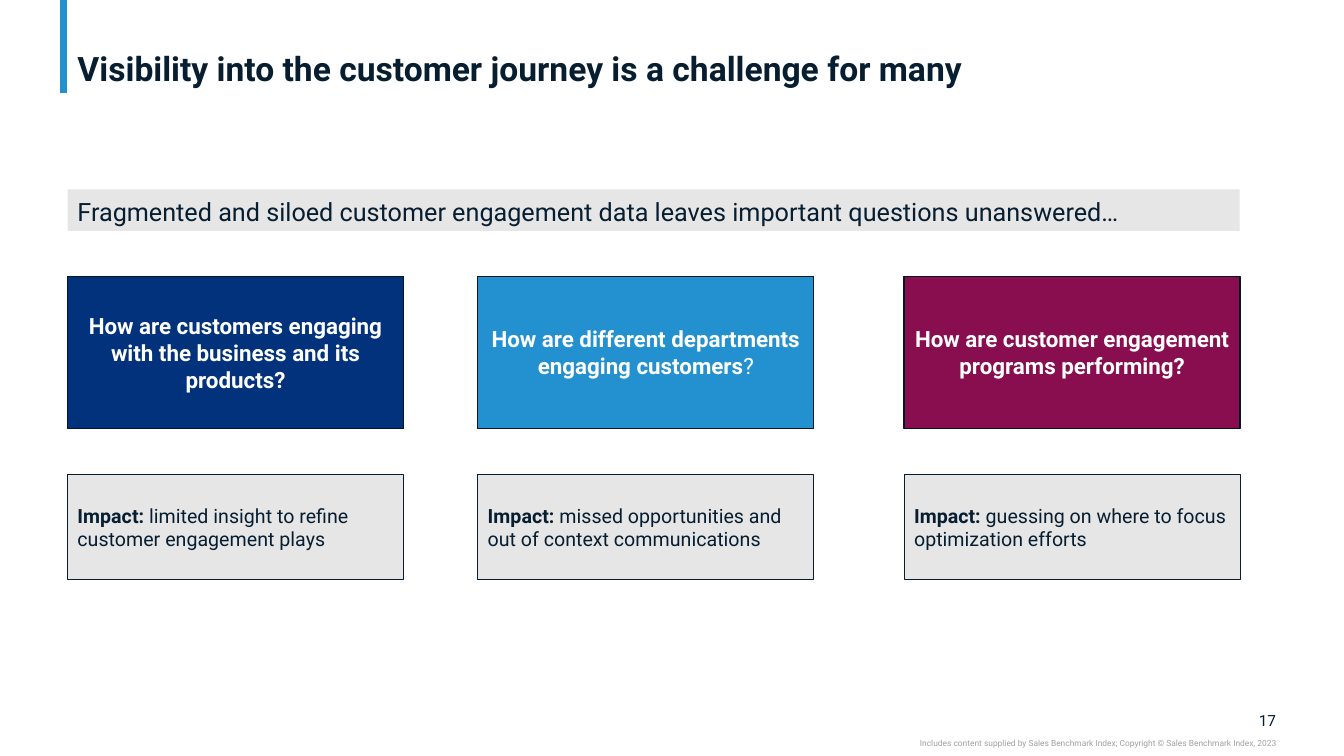
from pptx import Presentation
from pptx.dml.color import RGBColor
from pptx.enum.shapes import MSO_CONNECTOR, MSO_SHAPE
from pptx.enum.text import MSO_ANCHOR, PP_ALIGN
from pptx.oxml.ns import qn
from pptx.util import Pt
from lxml.etree import SubElement

FONT = "Roboto"
INK = "071E31"
GREY = "E7E6E6"
BLUE = "2391CF"

COLUMNS = [
    (48.24, "03327C",
     [("How are customers engaging with the business and its products?", True)],
     " limited insight to refine customer engagement plays"),
    (341.28, BLUE,
     [("How are different departments engaging customers", True), ("?", False)],
     " missed opportunities and out of context communications"),
    (645.84, "880E4F",
     [("How are customer engagement programs performing?", True)],
     " guessing on where to focus optimization efforts"),
]


def color(value):
    return RGBColor.from_string(value)


def write(shape, runs, size, ink=INK, align=PP_ALIGN.LEFT, anchor=MSO_ANCHOR.MIDDLE,
          inset=(7.2, 3.6), spacing=None, after=None):
    frame = shape.text_frame
    frame.word_wrap = True
    frame.vertical_anchor = anchor
    frame.margin_left = frame.margin_right = Pt(inset[0])
    frame.margin_top = frame.margin_bottom = Pt(inset[1])
    para = frame.paragraphs[0]
    para.alignment = align
    if spacing:
        para.line_spacing = spacing
    if after:
        para.space_after = Pt(after)
    for text, bold in runs:
        run = para.add_run()
        run.text = text
        run.font.name = FONT
        run.font.size = Pt(size)
        run.font.bold = bold
        run.font.color.rgb = color(ink)


def add_text(slide, box, runs, size, **style):
    shape = slide.shapes.add_textbox(*map(Pt, box))
    write(shape, runs, size, **style)


def add_panel(slide, box, fill, runs, size, line=None, weight=1, **style):
    shape = slide.shapes.add_shape(MSO_SHAPE.RECTANGLE, *map(Pt, box))
    shape.shadow.inherit = False
    shape.fill.solid()
    shape.fill.fore_color.rgb = color(fill)
    if line:
        shape.line.color.rgb = color(line)
        shape.line.width = Pt(weight)
    else:
        shape.line.fill.background()
    write(shape, runs, size, **style)


def add_header(slide, left, top, width, height):
    bar = slide.shapes.add_connector(
        MSO_CONNECTOR.STRAIGHT, Pt(left - 2.88), Pt(0), Pt(left - 2.88), Pt(top + height + 2.88))
    bar.line.color.rgb = color(BLUE)
    bar.line.width = Pt(5)
    SubElement(bar.element.spPr, qn("a:effectLst"))
    add_text(slide, (left, top, width, height),
             [("Visibility into the customer journey is a challenge for many", True)], 24,
             anchor=MSO_ANCHOR.BOTTOM, inset=(7.2, 0), spacing=0.9)


def add_banner(slide, left, top, width, height):
    add_panel(slide, (left, top, width, height), GREY,
              [("Fragmented and siloed customer engagement data leaves important questions unanswered…",
                False)],
              18, anchor=MSO_ANCHOR.TOP, spacing=1.07, after=8)


def add_column(slide, left, top, width, fill, question, impact):
    add_panel(slide, (left, top, width, 108.72), fill, question, 16, line="051624",
              ink="FFFFFF", align=PP_ALIGN.CENTER)
    add_panel(slide, (left, top + 141.84, width, 74.88), GREY,
              [("Impact:", True), (impact, False)], 14, line=INK, weight=0.75)


def add_footer(slide, right, top):
    add_text(slide, (right - 24, top, 24, 13.68), [("17", False)], 11,
             align=PP_ALIGN.RIGHT, inset=(0, 0))
    add_text(slide, (right - 371.52, top + 19.44, 371.52, 7.2),
             [("Includes content supplied by Sales Benchmark Index; "
               "Copyright © Sales Benchmark Index, 2023", False)],
             6, ink="A0A0A0", align=PP_ALIGN.RIGHT, anchor=MSO_ANCHOR.TOP, inset=(0, 0))


def main():
    deck = Presentation()
    deck.slide_width = Pt(960)
    deck.slide_height = Pt(540)
    slide = deck.slides.add_slide(deck.slide_layouts[6])
    add_header(slide, 48.24, 2.88, 863.28, 60.48)
    add_banner(slide, 48.24, 135.36, 837.36, 29.52)
    for left, fill, question, impact in COLUMNS:
        add_column(slide, left, 197.28, 240, fill, question, impact)
    add_footer(slide, 911.52, 507.6)
    deck.save("out.pptx")


if __name__ == "__main__":
    main()
